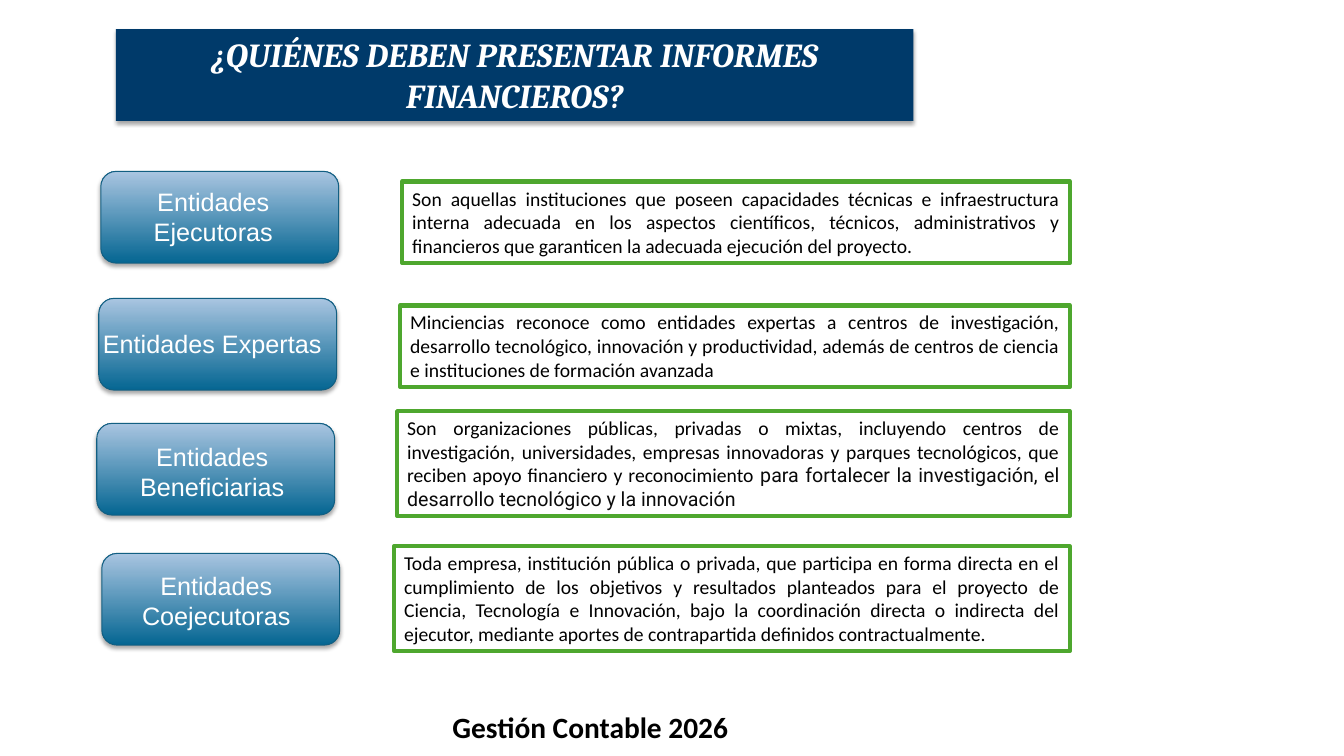
from dataclasses import dataclass

from lxml.etree import SubElement
from pptx import Presentation
from pptx.dml.color import RGBColor
from pptx.enum.shapes import MSO_SHAPE as Preset
from pptx.enum.text import MSO_ANCHOR as Anchor, MSO_AUTO_SIZE as AutoSize, PP_ALIGN as Align
from pptx.oxml.ns import qn
from pptx.shapes.autoshape import Shape
from pptx.slide import Slide
from pptx.util import Inches, Pt

# Colours
WHITE = RGBColor(0xFF, 0xFF, 0xFF)
BLACK = RGBColor(0x00, 0x00, 0x00)
NEAR_BLACK = RGBColor(0x0A, 0x0A, 0x0A)
NAVY = RGBColor(0x00, 0x3A, 0x6A)
DEEP_BLUE = RGBColor(0x05, 0x66, 0x92)
PALE_BLUE = RGBColor(0xA9, 0xC5, 0xE1)
EDGE_BLUE = RGBColor(0x12, 0x5F, 0x82)
GREEN = RGBColor(0x4E, 0xA7, 0x2E)

# Shared measures, in inches
BUTTON_WIDTH, BUTTON_HEIGHT = 2.36, 0.91
LABEL_WIDTH = 2.45
DESCRIPTION_RIGHT = 10.61


@dataclass(frozen=True)
class Entity:
    label: str
    button_left: float
    button_top: float
    label_left: float
    label_top: float
    label_height: float
    description: str
    description_left: float
    description_top: float
    description_height: float
    ending: str = ""


ENTITIES = [
    Entity(
        "Entidades Ejecutoras", 1.0, 1.7, 0.89, 1.8, 0.71,
        "Son aquellas instituciones que poseen capacidades técnicas e infraestructura interna "
        "adecuada en los aspectos científicos, técnicos, administrativos y financieros que "
        "garanticen la adecuada ejecución del proyecto.",
        3.99, 1.8, 0.81,
    ),
    Entity(
        "Entidades Expertas", 0.98, 2.96, 0.88, 3.21, 0.4,
        "Minciencias reconoce como entidades expertas a centros de investigación, desarrollo "
        "tecnológico, innovación y productividad, además de centros de ciencia e instituciones "
        "de formación avanzada",
        3.97, 3.03, 0.81,
    ),
    Entity(
        "Entidades Beneficiarias", 0.96, 4.2, 0.88, 4.33, 0.71,
        "Son organizaciones públicas, privadas o mixtas, incluyendo centros de investigación, "
        "universidades, empresas innovadoras y parques tecnológicos, que reciben apoyo "
        "financiero y reconocimiento ",
        3.94, 4.08, 1.04,
        "para fortalecer la investigación, el desarrollo tecnológico y la innovación",
    ),
    Entity(
        "Entidades Coejecutoras", 1.01, 5.49, 0.92, 5.61, 0.71,
        "Toda empresa, institución pública o privada, que participa en forma directa en el "
        "cumplimiento de los objetivos y resultados planteados para el proyecto de Ciencia, "
        "Tecnología e Innovación, bajo la coordinación directa o indirecta del ejecutor, "
        "mediante aportes de contrapartida definidos contractualmente.",
        3.91, 5.42, 1.04,
    ),
]


def add_text(shape: Shape, text: str, *, font: str, size: float, color: RGBColor,
             align: Align = Align.CENTER, anchor: Anchor = Anchor.TOP,
             bold: bool = False, italic: bool = False, grow: bool = True) -> None:
    """Append a formatted run to the first paragraph of a shape."""
    frame = shape.text_frame
    frame.word_wrap = True
    frame.auto_size = AutoSize.SHAPE_TO_FIT_TEXT if grow else AutoSize.NONE
    frame.vertical_anchor = anchor
    paragraph = frame.paragraphs[0]
    paragraph.alignment = align
    run = paragraph.add_run()
    run.text = text
    run.font.name = font
    run.font.size = Pt(size)
    run.font.color.rgb = color
    run.font.bold = bold
    run.font.italic = italic


def add_box(shapes, preset: Preset, left: float, top: float, width: float, height: float, *,
            fill: RGBColor | None = None, line: RGBColor | None = None,
            line_width: float = 1) -> Shape:
    shape = shapes.add_shape(preset, Inches(left), Inches(top), Inches(width), Inches(height))
    shape.shadow.inherit = False
    if fill is None:
        shape.fill.background()
    else:
        shape.fill.solid()
        shape.fill.fore_color.rgb = fill
    if line is None:
        shape.line.fill.background()
    else:
        shape.line.color.rgb = line
        shape.line.width = Pt(line_width)
    return shape


def add_shadow(shape: Shape) -> None:
    """Soft black shadow straight below the shape."""
    effects = shape.element.spPr.find(qn("a:effectLst"))
    shadow = SubElement(effects, qn("a:outerShdw"), blurRad=str(Pt(3.1)), dist=str(Pt(1.8)),
                        dir="5400000", rotWithShape="0")
    color = SubElement(shadow, qn("a:srgbClr"), val=str(BLACK))
    SubElement(color, qn("a:alpha"), val="35000")


def add_button(slide: Slide, entity: Entity) -> None:
    shapes = slide.shapes.add_group_shape().shapes
    button = add_box(shapes, Preset.ROUNDED_RECTANGLE, entity.button_left, entity.button_top,
                     BUTTON_WIDTH, BUTTON_HEIGHT, line=EDGE_BLUE, line_width=0.75)
    button.fill.gradient()
    button.fill.gradient_angle = 90
    for stop, color in zip(button.fill.gradient_stops, (DEEP_BLUE, PALE_BLUE)):
        stop.color.rgb = color
    add_shadow(button)
    label = shapes.add_textbox(Inches(entity.label_left), Inches(entity.label_top),
                               Inches(LABEL_WIDTH), Inches(entity.label_height))
    add_text(label, entity.label, font="Arial", size=18, color=WHITE)


def add_description(slide: Slide, entity: Entity) -> None:
    box = add_box(slide.shapes, Preset.RECTANGLE, entity.description_left,
                  entity.description_top, DESCRIPTION_RIGHT - entity.description_left,
                  entity.description_height, fill=WHITE, line=GREEN, line_width=3)
    add_text(box, entity.description, font="Calibri", size=14, color=BLACK,
             align=Align.JUSTIFY)
    if entity.ending:
        add_text(box, entity.ending, font="Roboto", size=14, color=NEAR_BLACK,
                 align=Align.JUSTIFY)


def main() -> None:
    presentation = Presentation()
    presentation.slide_width = Inches(13.33)
    presentation.slide_height = Inches(7.5)
    slide = presentation.slides.add_slide(presentation.slide_layouts[6])

    # Footer
    footer = add_box(slide.shapes, Preset.ROUNDED_RECTANGLE, 3.99, 6.97, 3.73, 0.48)
    add_text(footer, "Gestión Contable 2026", font="Calibri", size=21, color=BLACK,
             anchor=Anchor.MIDDLE, bold=True, grow=False)

    # Title banner
    title = add_box(slide.shapes, Preset.RECTANGLE, 1.15, 0.29, 7.91, 0.91, fill=NAVY)
    add_shadow(title)
    add_text(title, "¿QUIÉNES DEBEN PRESENTAR INFORMES FINANCIEROS?", font="Cambria",
             size=24, color=WHITE, bold=True, italic=True)

    # Entities with their descriptions
    for entity in ENTITIES:
        add_button(slide, entity)
        add_description(slide, entity)

    presentation.save("out.pptx")


if __name__ == "__main__":
    main()
